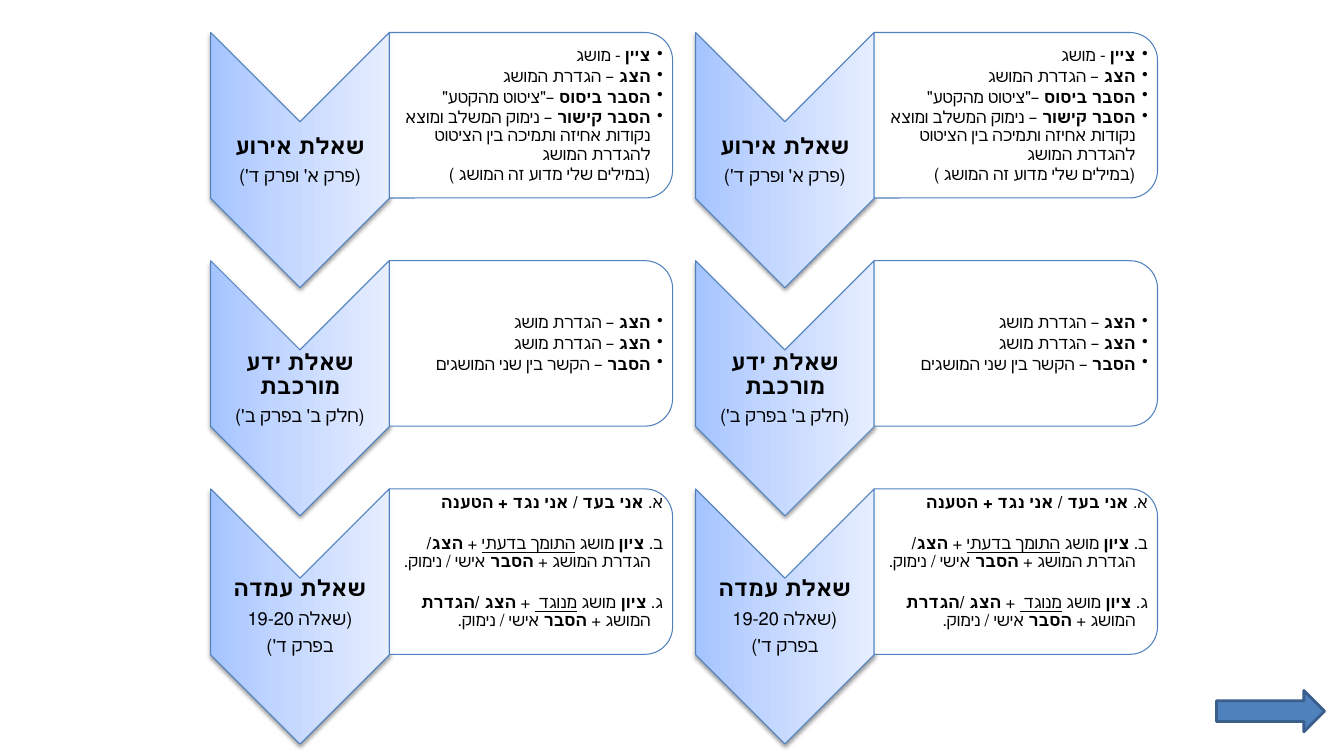
from lxml.etree import SubElement
from pptx import Presentation
from pptx.dml.color import RGBColor
from pptx.enum.shapes import MSO_SHAPE
from pptx.enum.text import MSO_ANCHOR, PP_ALIGN
from pptx.oxml import parse_xml
from pptx.oxml.ns import nsdecls, qn
from pptx.util import Cm, Pt

BULLET, PLAIN, LETTER = "bullet", "plain", "letter"
ROWS = [
    {
        "title": "שאלת אירוע",
        "notes": ["(פרק א' ופרק ד')"],
        "lift": 0,
        "body": [
            (BULLET, 0, [("ציין", "b"), (" - מושג", "")]),
            (BULLET, 0, [("הצג ", "b"), ("– הגדרת המושג", "")]),
            (BULLET, 0, [("הסבר ביסוס ", "b"), ("–\"ציטוט מהקטע\"", "")]),
            (BULLET, 0, [("הסבר קישור ", "b"),
                         ("– נימוק המשלב ומוצא נקודות אחיזה ותמיכה בין הציטוט להגדרת המושג", "")]),
            (PLAIN, 0, [("(במילים שלי מדוע זה המושג )", "")]),
        ],
    },
    {
        "title": "שאלת ידע מורכבת",
        "notes": ["(חלק ב' בפרק ב')"],
        "lift": 0,
        "body": [
            (BULLET, 0, [("הצג", "b"), (" – הגדרת מושג", "")]),
            (BULLET, 0, [("הצג", "b"), (" – הגדרת מושג", "")]),
            (BULLET, 0, [("הסבר", "b"), (" – הקשר בין שני המושגים", "")]),
        ],
    },
    {
        "title": "שאלת עמדה",
        "notes": ["(שאלה 19-20", "בפרק ד')"],
        "lift": 0.25,
        "body": [
            (LETTER, 0, [("א. ", ""), ("אני בעד / אני נגד + הטענה", "b")]),
            (LETTER, 14.5, [("ב. ", ""), ("ציון", "b"), (" מושג ", ""), ("התומך בדעתי", "u"),
                            (" + ", ""), ("הצג/", "b"), (" הגדרת המושג + ", ""),
                            ("הסבר ", "b"), ("אישי / נימוק.", "")]),
            (LETTER, 14.5, [("ג. ", ""), ("ציון ", "b"), ("מושג ", ""), ("מנוגד ", "u"),
                            (" + ", ""), ("הצג /הגדרת ", "b"), ("המושג + ", ""),
                            ("הסבר", "b"), (" אישי / נימוק.", "")]),
        ],
    },
]

THEME = {
    "font": "Calibri", "text": "000000", "line": "4F81BD", "panel": "FFFFFF",
    "arrow": "4F81BD", "arrow_line": "3A5F8C",
    "gradient": [(0, "A4C4FF"), (35, "BFD4FF"), (100, "E6EEFF")],
    "title": 16, "note": 13, "body": 12,
}
COLUMNS = [17.53, 5.31]
TOP, PITCH = 0.82, 5.75
CHEVRON_W, CHEVRON_H = 4.5, 6.43
PANEL_W, PANEL_H = 7.14, 4.17
INDENT = 0.31


def rgb(name):
    return RGBColor.from_string(THEME[name])


def add_shape(slide, kind, x, y, w, h, line, width, turned=False):
    if turned:
        x, y, w, h = x + (w - h) / 2, y + (h - w) / 2, h, w
    sp = slide.shapes.add_shape(kind, Cm(x), Cm(y), Cm(w), Cm(h))
    sp.rotation = 90 if turned else 0
    sp.shadow.inherit = False
    sp.line.color.rgb = rgb(line)
    sp.line.width = Pt(width)
    return sp


def add_chevron(slide, x, y):
    sp = add_shape(slide, MSO_SHAPE.CHEVRON, x, y, CHEVRON_W, CHEVRON_H, "line", 0.75, True)
    stops = "".join(f'<a:gs pos="{pos * 1000}"><a:srgbClr val="{color}"/></a:gs>'
                    for pos, color in THEME["gradient"])
    sp_pr = sp.element.spPr
    sp_pr.find(qn("a:prstGeom")).addnext(parse_xml(
        f'<a:gradFill {nsdecls("a")} rotWithShape="1"><a:gsLst>{stops}</a:gsLst>'
        '<a:lin ang="16200000" scaled="1"/></a:gradFill>'))
    shadow = SubElement(sp_pr.find(qn("a:effectLst")), qn("a:outerShdw"),
                        blurRad=str(Pt(3.1)), dist=str(Pt(1.6)), dir="5400000", rotWithShape="0")
    color = SubElement(shadow, qn("a:srgbClr"), val="000000")
    SubElement(color, qn("a:alpha"), val="38000")


def add_panel(slide, x, y):
    sp = add_shape(slide, MSO_SHAPE.ROUND_2_SAME_RECTANGLE, x, y, PANEL_W, PANEL_H,
                   "line", 0.75, True)
    sp.fill.solid()
    sp.fill.fore_color.rgb = rgb("panel")
    SubElement(sp.element.spPr.find(qn("a:solidFill"))[0], qn("a:alpha"), val="90000")


def add_text_frame(slide, x, y, w, h, left_inset):
    tf = slide.shapes.add_textbox(Cm(x), Cm(y), Cm(w), Cm(h)).text_frame
    tf.word_wrap = True
    tf.vertical_anchor = MSO_ANCHOR.MIDDLE
    tf.margin_left = Cm(left_inset)
    tf.margin_right = tf.margin_top = tf.margin_bottom = Cm(0.03)
    return tf


def add_paragraph(tf, runs, size, align, after, before=0, kind=None):
    p = tf.paragraphs[0] if not tf.paragraphs[0].runs else tf.add_paragraph()
    p.alignment = align
    p.line_spacing = 0.9
    p.space_after = Pt(after)
    if before:
        p.space_before = Pt(before)
    p_pr = p._p.get_or_add_pPr()
    p_pr.set("rtl", "1")
    if kind:
        p.level = 1
        p_pr.set("marL", str(Cm(INDENT)))
        p_pr.set("indent", str(0 if kind == PLAIN else -Cm(INDENT)))
        if kind == BULLET:
            SubElement(p_pr, qn("a:buChar"), char="•")
        else:
            SubElement(p_pr, qn("a:buNone"))
    p.font.name = THEME["font"]
    p.font.size = Pt(size)
    p.font.color.rgb = rgb("text")
    for text, style in runs:
        r = p.add_run()
        r.text = text
        r.font.bold = style == "b"
        if style == "u":
            r.font.underline = True


def add_row(slide, row, x, y):
    add_chevron(slide, x, y)
    tf = add_text_frame(slide, x, y + 2.26, CHEVRON_W, 1.93, 0.03)
    add_paragraph(tf, [(row["title"], "b")], THEME["title"], PP_ALIGN.CENTER, 5.5)
    for note in row["notes"]:
        add_paragraph(tf, [(note, "")], THEME["note"], PP_ALIGN.CENTER, 5.5)
    panel_x = x + CHEVRON_W
    add_panel(slide, panel_x, y)
    tf = add_text_frame(slide, panel_x, y + 0.22 - row["lift"], 6.93, 3.76, 0.23)
    for kind, before, runs in row["body"]:
        add_paragraph(tf, runs, THEME["body"], PP_ALIGN.RIGHT, 1.75, before, kind)


def main():
    prs = Presentation()
    prs.slide_width, prs.slide_height = Cm(33.87), Cm(19.05)
    slide = prs.slides.add_slide(prs.slide_layouts[6])
    for x in COLUMNS:
        for i, row in enumerate(ROWS):
            add_row(slide, row, x, TOP + i * PITCH)
    arrow = add_shape(slide, MSO_SHAPE.RIGHT_ARROW, 30.66, 17.4, 2.72, 1.04, "arrow_line", 2)
    arrow.fill.solid()
    arrow.fill.fore_color.rgb = rgb("arrow")
    prs.save("out.pptx")


if __name__ == "__main__":
    main()
